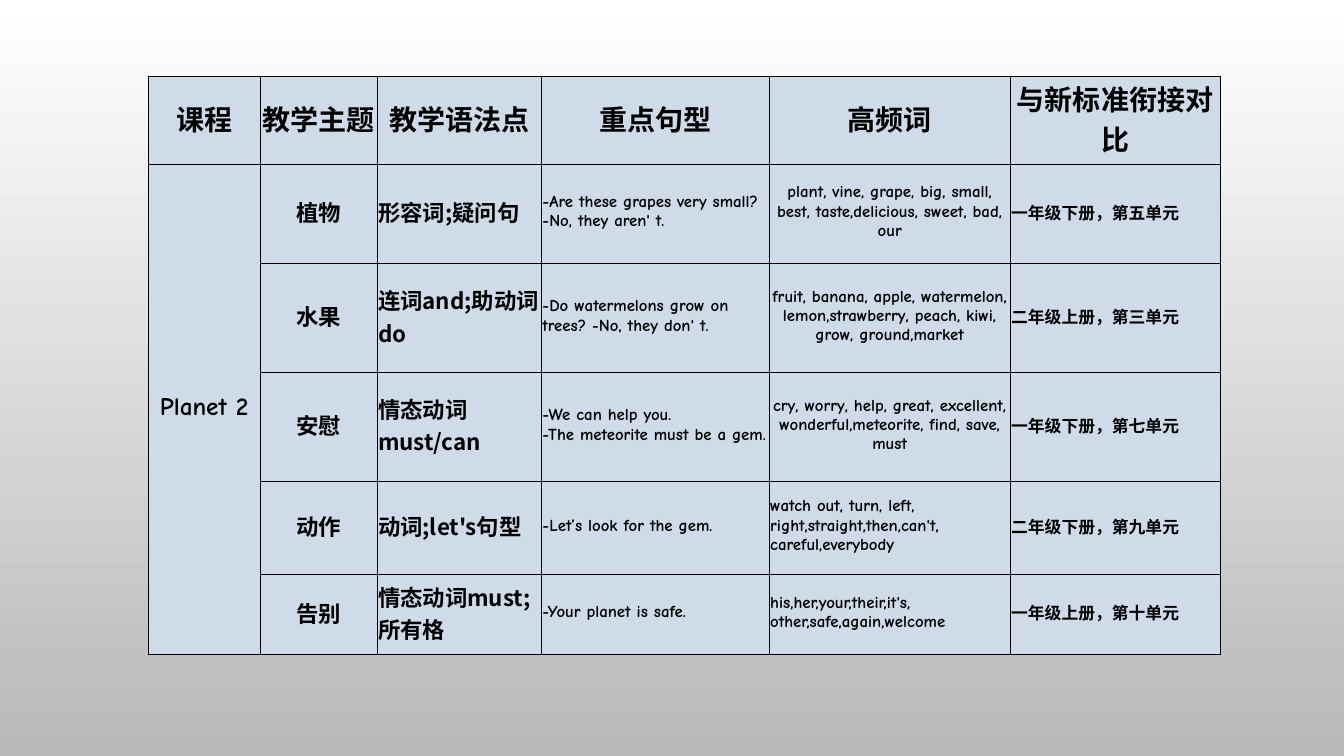
"""Build a one-slide course table that links lesson topics to the new standard."""
from dataclasses import dataclass

from lxml import etree
from pptx import Presentation
from pptx.dml.color import RGBColor
from pptx.enum.text import MSO_ANCHOR, PP_ALIGN
from pptx.oxml import parse_xml
from pptx.oxml.ns import nsdecls, qn
from pptx.util import Inches, Pt

LEFT, CENTER = PP_ALIGN.LEFT, PP_ALIGN.CENTER
MIDDLE = MSO_ANCHOR.MIDDLE


@dataclass(frozen=True)
class Theme:
    cjk: str = "Noto Sans CJK SC"
    latin: str = "Comic Neue"
    ink: str = "000000"
    cell: str = "D0DBE9"
    back_top: str = "FFFFFF"
    back_bottom: str = "B9B9B9"
    header: int = 20
    course: int = 18
    topic: int = 16
    detail: int = 12
    border: float = 0.5


theme = Theme()

HEADERS = ["课程", "教学主题", "教学语法点", "重点句型", "高频词", "与新标准衔接对比"]
COURSE = "Planet 2"
LESSONS = [
    ["植物", "形容词;疑问句", "-Are these grapes very small?\n-No, they aren' t.",
     "plant, vine, grape, big, small, best, taste,delicious, sweet, bad, our",
     "一年级下册，第五单元"],
    ["水果", "连词and;助动词do", "-Do watermelons grow on trees? -No, they don' t.",
     "fruit, banana, apple, watermelon, lemon,strawberry, peach, kiwi, grow, ground,market",
     "二年级上册，第三单元"],
    ["安慰", "情态动词must/can", "-We can help you.\n-The meteorite must be a gem.",
     "cry, worry, help, great, excellent, wonderful,meteorite, find, save, must",
     "一年级下册，第七单元"],
    ["动作", "动词;let's句型", "-Let’s look for the gem.",
     "watch out, turn, left, right,straight,then,can't,\ncareful,everybody",
     "二年级下册，第九单元"],
    ["告别", "情态动词must;所有格", "-Your planet is safe.",
     "his,her,your,their,it's, other,safe,again,welcome",
     "一年级上册，第十单元"],
]
COLUMN_WIDTHS = [1.11, 1.16, 1.63, 2.26, 2.39, 2.08]
ROW_HEIGHTS = [0.8, 0.99, 1.08, 1.08, 0.92, 0.8]
COLUMN_STYLES = [
    (theme.latin, theme.course, CENTER),
    (theme.cjk, theme.topic, CENTER),
    (theme.cjk, theme.topic, LEFT),
    (theme.latin, theme.detail, LEFT),
    (theme.latin, theme.detail, CENTER),
    (theme.cjk, theme.detail, LEFT),
]
CENTERED_WORD_ROWS = 3
WORD_COLUMN = 4


def style_cell(cell):
    """Set the fill, margins and thin borders of a cell."""
    cell.fill.solid()
    cell.fill.fore_color.rgb = RGBColor.from_string(theme.cell)
    cell.vertical_anchor = MIDDLE
    cell.margin_left = cell.margin_right = cell.margin_top = Inches(0.01)
    cell.margin_bottom = Inches(0.05)
    tc_pr = cell._tc.get_or_add_tcPr()
    for i, side in enumerate(("lnL", "lnR", "lnT", "lnB")):
        tc_pr.insert(i, parse_xml(
            f'<a:{side} {nsdecls("a")} w="{Pt(theme.border)}"><a:solidFill>'
            f'<a:srgbClr val="{theme.ink}"/></a:solidFill></a:{side}>'))


def write_cell(cell, text, font, size, align):
    """Fill a cell with bold paragraphs in one font."""
    cell.text = text
    for p in cell.text_frame.paragraphs:
        p.alignment = align
        p.font.name = font
        p.font.size = Pt(size)
        p.font.bold = True
        p.font.color.rgb = RGBColor.from_string(theme.ink)
        latin = p._p.pPr.find(qn("a:defRPr")).find(qn("a:latin"))
        east_asian = etree.Element(qn("a:ea"), typeface=font)
        latin.addnext(east_asian)


prs = Presentation()
prs.slide_width, prs.slide_height = Inches(13.33), Inches(7.5)
s = prs.slides.add_slide(prs.slide_layouts[6])

back = s.background.fill
back.gradient()
back.gradient_angle = 270
for stop, color in zip(back.gradient_stops, (theme.back_top, theme.back_bottom)):
    stop.color.rgb = RGBColor.from_string(color)

table = s.shapes.add_table(
    len(ROW_HEIGHTS), len(COLUMN_WIDTHS), Inches(1.47), Inches(0.76),
    Inches(sum(COLUMN_WIDTHS)), Inches(sum(ROW_HEIGHTS))).table
for column, width in zip(table.columns, COLUMN_WIDTHS):
    column.width = Inches(width)
for row, height in zip(table.rows, ROW_HEIGHTS):
    row.height = Inches(height)
for cell in table.iter_cells():
    style_cell(cell)

for c, header in enumerate(HEADERS):
    write_cell(table.cell(0, c), header, theme.cjk, theme.header, CENTER)

table.cell(1, 0).merge(table.cell(len(LESSONS), 0))
write_cell(table.cell(1, 0), COURSE, *COLUMN_STYLES[0])

for r, lesson in enumerate(LESSONS, start=1):
    for c, text in enumerate(lesson, start=1):
        font, size, align = COLUMN_STYLES[c]
        if c == WORD_COLUMN and r > CENTERED_WORD_ROWS:
            align = LEFT
        write_cell(table.cell(r, c), text, font, size, align)

prs.save("out.pptx")
